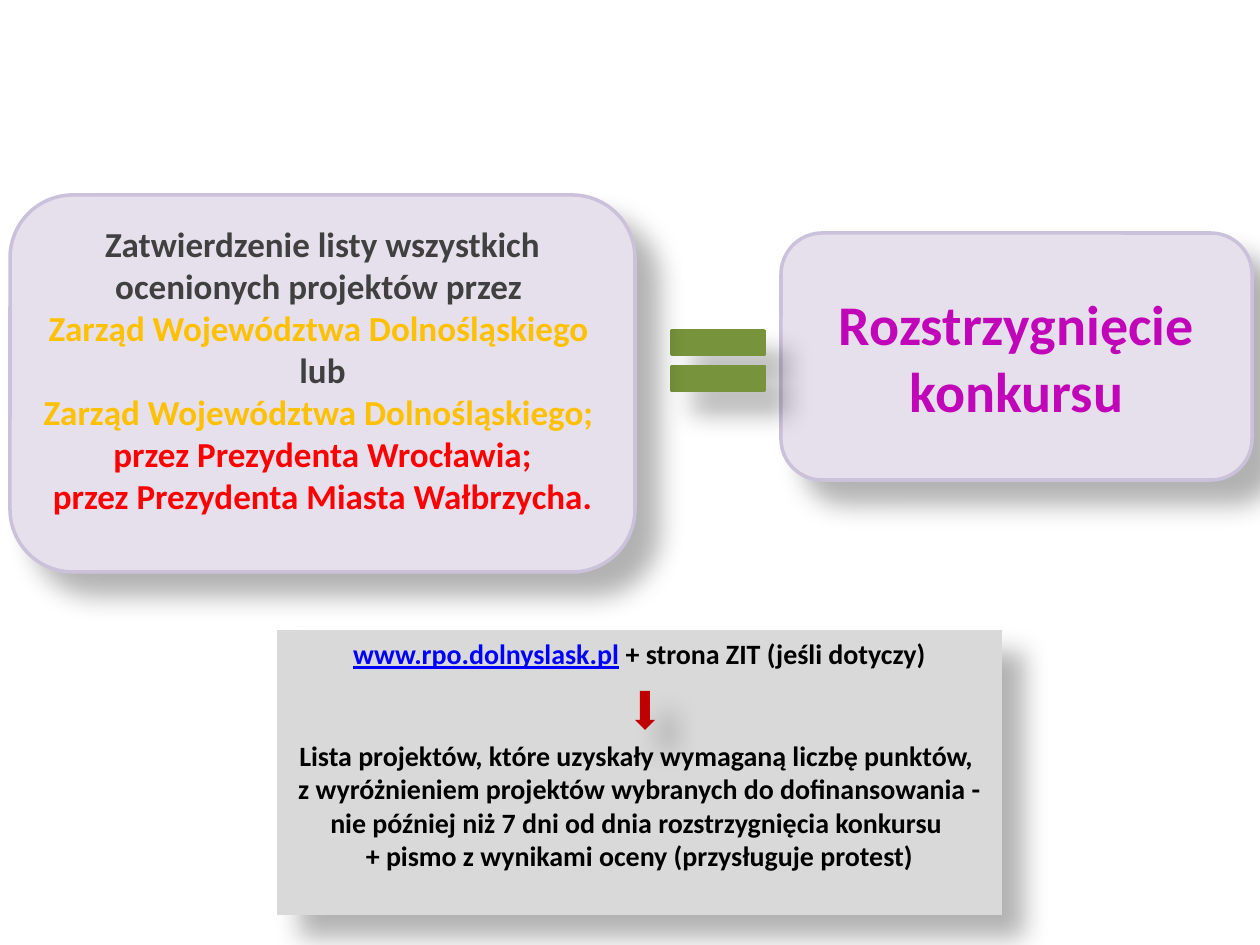
"""Builds the slide on how the competition is settled and announced."""
from lxml import etree
from pptx import Presentation
from pptx.dml.color import RGBColor
from pptx.enum.shapes import MSO_SHAPE
from pptx.enum.text import MSO_ANCHOR, PP_ALIGN
from pptx.oxml.ns import qn
from pptx.util import Inches, Pt

PX = Inches(1) / 126
ROUNDED, EQUALS = MSO_SHAPE.ROUNDED_RECTANGLE, MSO_SHAPE.MATH_EQUAL
RECTANGLE, DOWN_ARROW = MSO_SHAPE.RECTANGLE, MSO_SHAPE.DOWN_ARROW
TOP, MIDDLE, CENTER = MSO_ANCHOR.TOP, MSO_ANCHOR.MIDDLE, PP_ALIGN.CENTER
LILAC, LILAC_EDGE, GREEN, GREY = "E6E0EC", "CCC1DA", "77933C", "D9D9D9"
DARK, GOLD, RED, MAGENTA = "404040", "FFC000", "FF0000", "C105B8"
BLACK, BLUE, DARK_RED = "000000", "0000FF", "C00000"


def add_shadowed_shape(kind, box, fill, line=None):
    shape = slide.shapes.add_shape(kind, *[round(value * PX) for value in box])
    shape.fill.solid()
    shape.fill.fore_color.rgb = RGBColor.from_string(fill)
    if line:
        shape.line.color.rgb = RGBColor.from_string(line)
        shape.line.width = Pt(2)
    else:
        shape.line.fill.background()
    shape.shadow.inherit = False
    effects = shape._element.spPr.find(qn("a:effectLst"))
    shadow = etree.SubElement(effects, qn("a:outerShdw"), blurRad=str(Pt(15)), dist=str(Pt(18)),
                              dir="2700000", algn="tl", rotWithShape="0")
    color = etree.SubElement(shadow, qn("a:srgbClr"), val=BLACK)
    etree.SubElement(color, qn("a:alpha"), val="30000")
    return shape


def write_paragraphs(shape, paragraphs, size, anchor):
    text_frame = shape.text_frame
    text_frame.word_wrap = True
    text_frame.vertical_anchor = anchor
    for index, runs in enumerate(paragraphs):
        paragraph = text_frame.add_paragraph() if index else text_frame.paragraphs[0]
        paragraph.alignment = CENTER
        for text, color in runs:
            run = paragraph.add_run()
            run.text = text
            run.font.name = "Calibri"
            run.font.size = Pt(size)
            run.font.bold = True
            run.font.color.rgb = RGBColor.from_string(color)


presentation = Presentation()
presentation.slide_width, presentation.slide_height = Inches(10), Inches(7.5)
slide = presentation.slides.add_slide(presentation.slide_layouts[6])

result = add_shadowed_shape(ROUNDED, (781, 233, 471, 247), LILAC, LILAC_EDGE)
write_paragraphs(result, [[("Rozstrzygnięcie konkursu", MAGENTA)]], 32, MIDDLE)

add_shadowed_shape(EQUALS, (655, 310, 126, 101), GREEN, GREEN)

approval = add_shadowed_shape(ROUNDED, (10, 195, 625, 377), LILAC, LILAC_EDGE)
approval_lines = [
    [("Zatwierdzenie listy wszystkich ocenionych projektów przez ", DARK)],
    [("Zarząd Województwa Dolnośląskiego ", GOLD)],
    [("lub", DARK)],
    [("Zarząd Województwa Dolnośląskiego; ", GOLD)],
    [("przez Prezydenta Wrocławia;", RED)],
    [("przez Prezydenta Miasta Wałbrzycha.", RED)],
]
write_paragraphs(approval, approval_lines, 20, MIDDLE)
approval.text_frame.margin_bottom = round(34 * PX)

publication = add_shadowed_shape(RECTANGLE, (277, 630, 725, 285), GREY)
publication_lines = [
    [("www.rpo.dolnyslask.pl", BLUE), (" + strona ZIT (jeśli dotyczy)", BLACK)],
    [("Lista projektów, które uzyskały wymaganą liczbę punktów, ", BLACK)],
    [("z wyróżnieniem projektów wybranych do dofinansowania - "
      "nie później niż 7 dni od dnia rozstrzygnięcia konkursu ", BLACK)],
    [("+ pismo z wynikami oceny (przysługuje protest)", BLACK)],
]
write_paragraphs(publication, publication_lines, 16, TOP)
address, list_intro = publication.text_frame.paragraphs[:2]
address.runs[0].font.underline = True
list_intro.space_before = Pt(39)

add_shadowed_shape(DOWN_ARROW, (635, 691, 20, 39), DARK_RED)

presentation.save("out.pptx")
